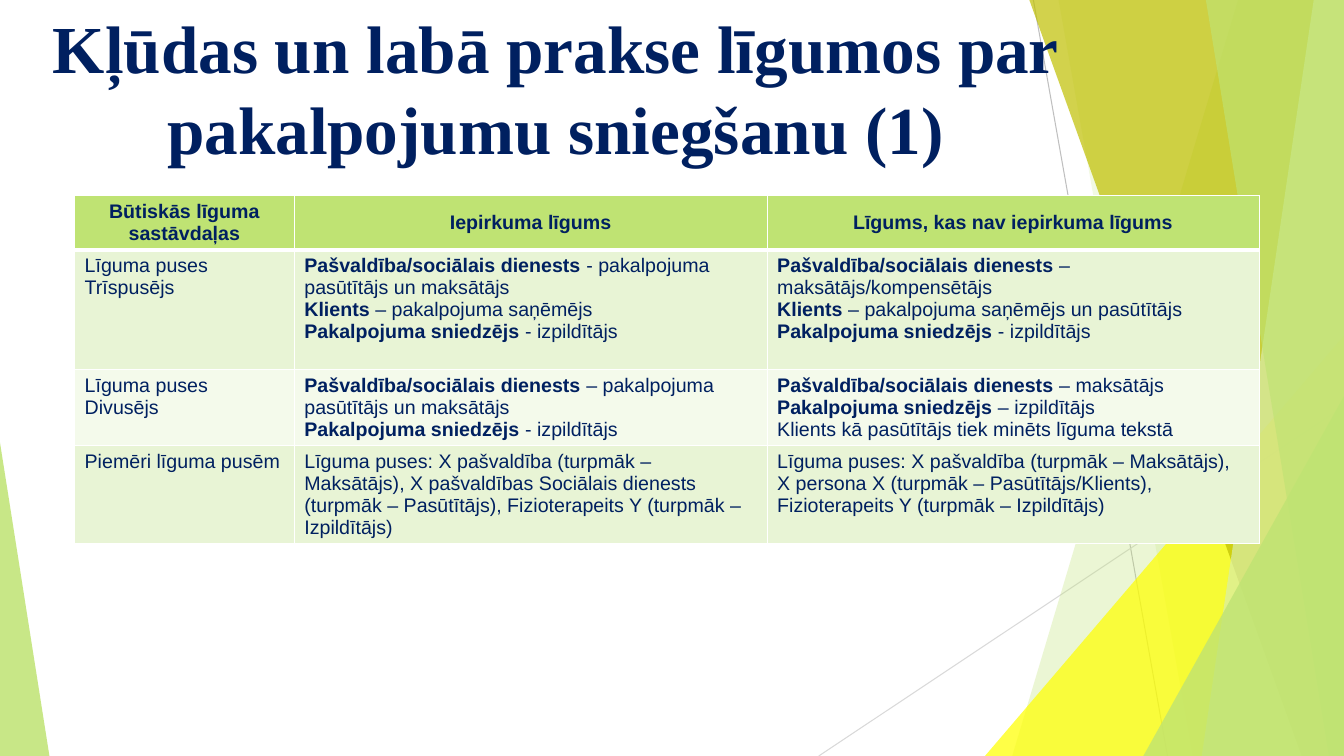
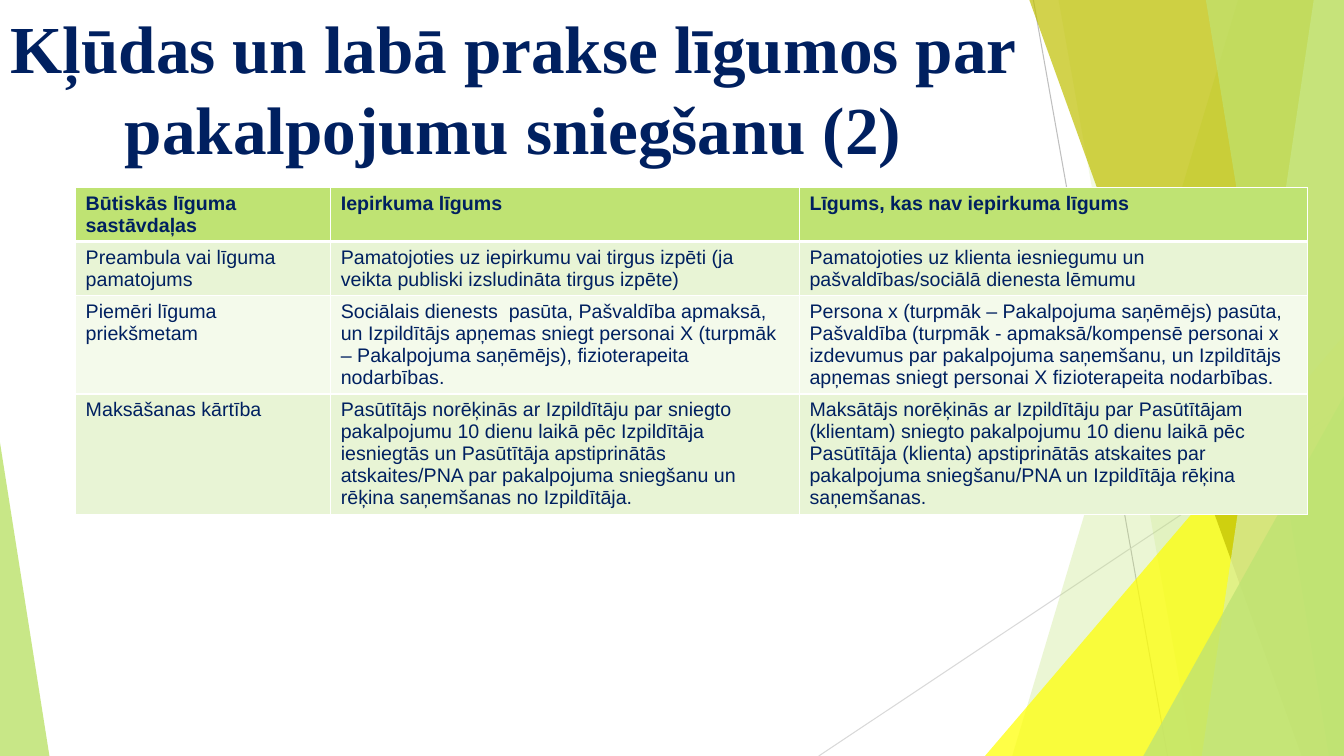
"""Two slides comparing procurement contracts with other service contracts."""
from lxml.etree import SubElement
from pptx import Presentation
from pptx.dml.color import RGBColor
from pptx.enum.shapes import MSO_CONNECTOR, MSO_SHAPE
from pptx.enum.text import MSO_ANCHOR, MSO_AUTO_SIZE, PP_ALIGN
from pptx.oxml.ns import qn
from pptx.util import Inches, Pt

NAVY, LIME, WHITE = "002060", "BFE373", "FFFFFF"
BANDS = ["F4FAEB", "E8F4D5"]
HEADINGS = ["Būtiskās līguma sastāvdaļas", "Iepirkuma līgums", "Līgums, kas nav iepirkuma līgums"]

PAGES = [
    {
        "number": 1, "title_left": 0, "left": 5.55, "top": 25.87,
        "columns": [16.35, 35.18, 36.61], "lines": [2, 5, 3, 4],
        "align": PP_ALIGN.CENTER, "anchor": MSO_ANCHOR.MIDDLE,
        "rows": [
            ["Līguma puses\nTrīspusējs",
             "**Pašvaldība/sociālais dienests **- pakalpojuma pasūtītājs un maksātājs\n"
             "**Klients** – pakalpojuma saņēmējs\n"
             "**Pakalpojuma sniedzējs **- izpildītājs",
             "**Pašvaldība/sociālais dienests **– maksātājs/kompensētājs\n"
             "**Klients** – pakalpojuma saņēmējs un pasūtītājs\n"
             "**Pakalpojuma sniedzējs **- izpildītājs"],
            ["Līguma puses\nDivusējs",
             "**Pašvaldība/sociālais dienests **– pakalpojuma pasūtītājs un maksātājs\n"
             "**Pakalpojuma sniedzējs **- izpildītājs",
             "**Pašvaldība/sociālais dienests **– maksātājs\n"
             "**Pakalpojuma sniedzējs **– izpildītājs\n"
             "Klients kā pasūtītājs tiek minēts līguma tekstā"],
            ["Piemēri līguma pusēm",
             "Līguma puses: X pašvaldība (turpmāk – Maksātājs), X pašvaldības Sociālais dienests "
             "(turpmāk – Pasūtītājs), Fizioterapeits Y (turpmāk – Izpildītājs)",
             "Līguma puses: X pašvaldība (turpmāk – Maksātājs), X persona X "
             "(turpmāk – Pasūtītājs/Klients), Fizioterapeits Y (turpmāk – Izpildītājs)"],
        ],
    },
    {
        "number": 2, "title_left": -3.15, "left": 5.63, "top": 24.8,
        "columns": [18.98, 34.88, 37.81], "lines": [2, 2, 4, 5],
        "align": PP_ALIGN.LEFT, "anchor": MSO_ANCHOR.TOP,
        "rows": [
            ["Preambula vai līguma pamatojums",
             "Pamatojoties uz iepirkumu vai tirgus izpēti (ja veikta publiski izsludināta tirgus izpēte)",
             "Pamatojoties uz klienta iesniegumu un pašvaldības/sociālā dienesta lēmumu"],
            ["Piemēri līguma priekšmetam",
             "Sociālais dienests  pasūta, Pašvaldība apmaksā, un Izpildītājs apņemas sniegt personai X "
             "(turpmāk – Pakalpojuma saņēmējs), fizioterapeita nodarbības.",
             "Persona x (turpmāk – Pakalpojuma saņēmējs) pasūta, Pašvaldība (turpmāk - apmaksā/kompensē "
             "personai x izdevumus par pakalpojuma saņemšanu, un Izpildītājs apņemas sniegt personai X "
             "fizioterapeita nodarbības."],
            ["Maksāšanas kārtība",
             "Pasūtītājs norēķinās ar Izpildītāju par sniegto pakalpojumu 10 dienu laikā pēc Izpildītāja "
             "iesniegtās un Pasūtītāja apstiprinātās atskaites/PNA par pakalpojuma sniegšanu un rēķina "
             "saņemšanas no Izpildītāja.",
             "Maksātājs norēķinās ar Izpildītāju par Pasūtītājam (klientam) sniegto pakalpojumu 10 dienu "
             "laikā pēc Pasūtītāja (klienta) apstiprinātās atskaites par pakalpojuma sniegšanu/PNA un "
             "Izpildītāja rēķina saņemšanas."],
        ],
    },
]


def paint(fill, color, opacity=100):
    fill.solid()
    fill.fore_color.rgb = RGBColor.from_string(color)
    if opacity < 100:
        srgb = fill._xPr.find(qn("a:solidFill")).find(qn("a:srgbClr"))
        SubElement(srgb, qn("a:alpha"), val=str(opacity * 1000))


def write(paragraph, words, font, size, bold):
    run = paragraph.add_run()
    run.text = words
    run.font.name, run.font.size, run.font.bold = font, Pt(size), bold
    paint(run.font.fill, NAVY)


prs = Presentation()
prs.slide_width, prs.slide_height = Inches(13.33), Inches(7.5)
COL, ROW = prs.slide_width / 100, prs.slide_height / 100
layout = prs.slide_layouts[5]
slides = [prs.slides.add_slide(layout) for page in PAGES]
canvas = slides[0].shapes
backdrop = []

for x1, y1, x2, y2, color in [(76.89, 0, 86.87, 100, "BFBFBF"), (100, 53.73, 60.92, 100, "D9D9D9")]:
    ray = canvas.add_connector(MSO_CONNECTOR.STRAIGHT, int(x1 * COL), int(y1 * ROW),
                               int(x2 * COL), int(y2 * ROW))
    ray.line.width = Pt(0.75)
    paint(ray.line.fill, color)
    SubElement(ray.element.spPr, qn("a:effectLst"))
    backdrop.append(ray)

FACETS = [
    ("band", 92.12, 75.32, LIME, 30),
    ("band", 78.77, 88.75, LIME, 20),
    ("peak", 73.29, 100, 44.4, 1, "FFFF00", 72),
    ("band", 76.59, 96.85, "BFBF00", 70),
    ("band", 97.75, 89.42, "D9EEAB", 70),
    ("band", 89.72, 98.87, LIME, 65),
    ("peak", 85.07, 100, 52.4, 1, LIME, 80),
    ("peak", 0, 3.68, 58.53, 0, LIME, 85),
]
for kind, *place, color, opacity in FACETS:
    if kind == "band":
        top_x, bottom_x = place
        outline = canvas.build_freeform(int(top_x * COL), 0)
        outline.add_line_segments([(int(x * COL), int(y * ROW)) for x, y in
                                   [(100, 0), (100, 100), (bottom_x, 100)]])
        facet = outline.convert_to_shape()
    else:
        left, right, top, apex = place
        facet = canvas.add_shape(MSO_SHAPE.ISOSCELES_TRIANGLE, int(left * COL), int(top * ROW),
                                 int((right - left) * COL), int((100 - top) * ROW))
        facet.adjustments[0] = apex
    paint(facet.fill, color, opacity)
    facet.line.fill.background()
    facet.shadow.inherit = False
    backdrop.append(facet)

for piece in backdrop:
    layout.shapes.element.append(piece.element)

for slide, page in zip(slides, PAGES):
    title = slide.shapes.title
    title.left, title.top = int(page["title_left"] * COL), int(10.13 * ROW)
    title.width, title.height = int(82.67 * COL), int(10.53 * ROW)
    heading = title.text_frame
    heading.word_wrap, heading.auto_size = True, MSO_AUTO_SIZE.NONE
    heading.vertical_anchor = MSO_ANCHOR.MIDDLE
    heading.margin_bottom = Inches(0.63)
    heading.paragraphs[0].alignment = PP_ALIGN.CENTER
    write(heading.paragraphs[0],
          f"Kļūdas un labā prakse līgumos par pakalpojumu sniegšanu ({page['number']})",
          "Times New Roman", 48, True)

    heights = [int((1.33 + 2.9 * count) * ROW) for count in page["lines"]]
    widths = [int(share * COL) for share in page["columns"]]
    contracts = slide.shapes.add_table(len(heights), len(widths), int(page["left"] * COL),
                                       int(page["top"] * ROW), sum(widths), sum(heights)).table
    for column, width in zip(contracts.columns, widths):
        column.width = width
    for r, texts in enumerate([HEADINGS] + page["rows"]):
        contracts.rows[r].height = heights[r]
        for c, text in enumerate(texts):
            cell = contracts.cell(r, c)
            cell.vertical_anchor = MSO_ANCHOR.TOP if r else page["anchor"]
            for side in "LRTB":
                thick = (r, side) in [(0, "B"), (1, "T")]
                border = SubElement(cell._tc.get_or_add_tcPr(), qn(f"a:ln{side}"),
                                    w=str(Pt(3 if thick else 1)))
                SubElement(SubElement(border, qn("a:solidFill")), qn("a:srgbClr"), val=WHITE)
            paint(cell.fill, BANDS[r % 2] if r else LIME)
            for n, line in enumerate(text.split("\n")):
                paragraph = cell.text_frame.add_paragraph() if n else cell.text_frame.paragraphs[0]
                paragraph.alignment = PP_ALIGN.LEFT if r else page["align"]
                for k, words in enumerate(line.split("**")):
                    if words:
                        write(paragraph, words, "Arial", 14, r == 0 or k % 2 == 1)

prs.save("out.pptx")
